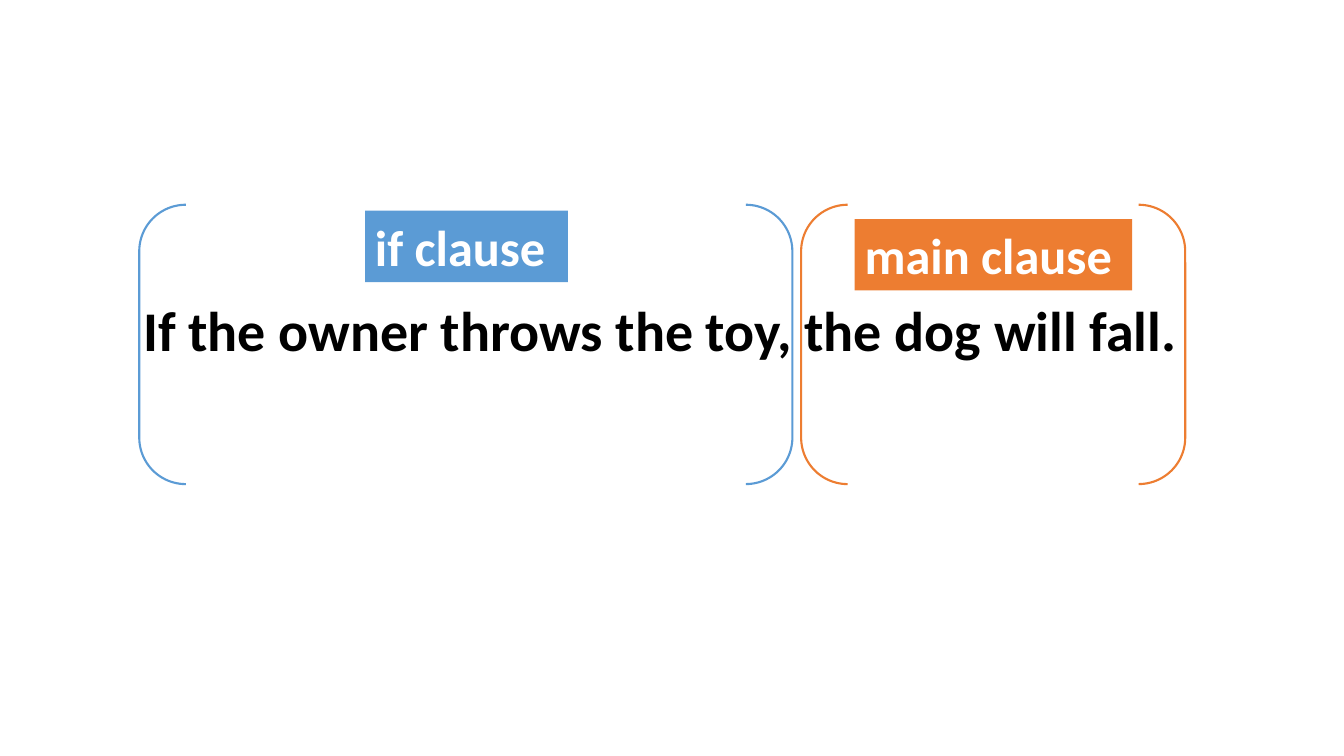
from pptx import Presentation
from pptx.dml.color import RGBColor
from pptx.enum.shapes import MSO_SHAPE
from pptx.enum.text import MSO_ANCHOR, PP_ALIGN
from pptx.util import Cm, Pt

BLUE = RGBColor(0x5B, 0x9B, 0xD5)
ORANGE = RGBColor(0xED, 0x7D, 0x31)
BLACK = RGBColor(0x00, 0x00, 0x00)
WHITE = RGBColor(0xFF, 0xFF, 0xFF)
FONT_NAME = "Calibri"

BRACKET_TOP = 5.16
BRACKET_HEIGHT = 7.04
LABEL_HEIGHT = 1.8


def write_line(shape, text, size, color, alignment):
    text_frame = shape.text_frame
    text_frame.text = text
    text_frame.word_wrap = True
    text_frame.vertical_anchor = MSO_ANCHOR.TOP
    paragraph = text_frame.paragraphs[0]
    paragraph.alignment = alignment
    font = paragraph.runs[0].font
    font.name = FONT_NAME
    font.size = Pt(size)
    font.bold = True
    font.color.rgb = color
    return paragraph


def add_sentence(slide, left, top, width, height, text):
    sentence = slide.shapes.add_textbox(Cm(left), Cm(top), Cm(width), Cm(height))
    paragraph = write_line(sentence, text, 40, BLACK, PP_ALIGN.CENTER)
    paragraph.line_spacing = 0.9


def add_clause(slide, left, width, color, text, label_offset, label_width):
    label_left, label_top = label_offset
    label = slide.shapes.add_shape(
        MSO_SHAPE.RECTANGLE,
        Cm(left + label_left), Cm(BRACKET_TOP + label_top),
        Cm(label_width), Cm(LABEL_HEIGHT),
    )
    label.shadow.inherit = False
    label.fill.solid()
    label.fill.fore_color.rgb = color
    label.line.fill.background()
    write_line(label, text, 36, WHITE, PP_ALIGN.LEFT)

    brackets = slide.shapes.add_shape(
        MSO_SHAPE.DOUBLE_BRACKET,
        Cm(left), Cm(BRACKET_TOP), Cm(width), Cm(BRACKET_HEIGHT),
    )
    brackets.shadow.inherit = False
    brackets.fill.background()
    brackets.line.color.rgb = color
    brackets.line.width = Pt(1.5)


def main():
    presentation = Presentation()
    presentation.slide_width = Cm(33.87)
    presentation.slide_height = Cm(19.05)
    slide = presentation.slides.add_slide(presentation.slide_layouts[6])

    add_sentence(slide, 2.03, 7.52, 29.21, 11.53,
                 "If the owner throws the toy, the dog will fall.")
    add_clause(slide, 3.51, 16.46, BLUE, "if clause", (5.69, 0.15), 5.11)
    add_clause(slide, 20.19, 9.68, ORANGE, "main clause", (1.35, 0.36), 6.99)

    presentation.save("out.pptx")


if __name__ == "__main__":
    main()
